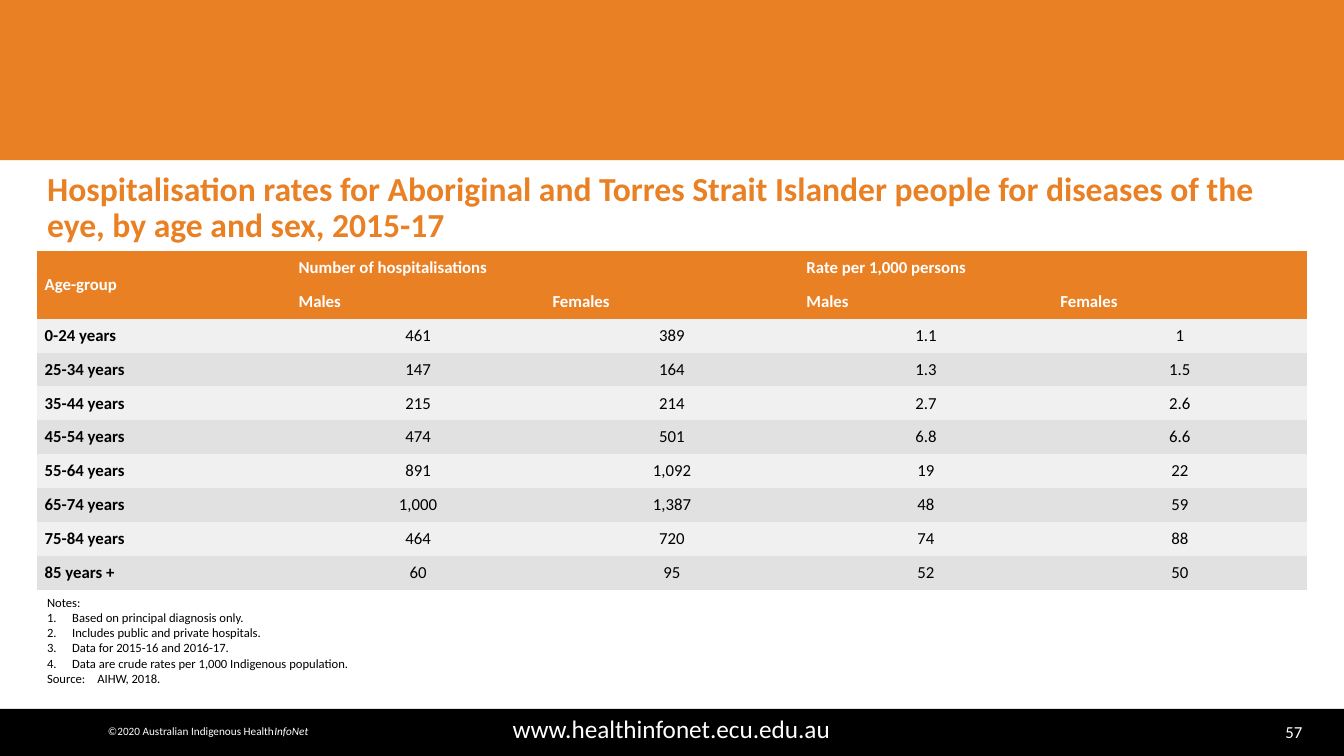
from lxml.etree import SubElement
from pptx import Presentation
from pptx.dml.color import RGBColor
from pptx.enum.shapes import MSO_SHAPE
from pptx.enum.text import MSO_ANCHOR as ANCHOR, PP_ALIGN as ALIGN
from pptx.oxml.ns import qn
from pptx.util import Pt

ORANGE = RGBColor(0xEA, 0x80, 0x24)
BLACK = RGBColor(0, 0, 0)
WHITE = RGBColor(0xFF, 0xFF, 0xFF)
LIGHT_GREY = RGBColor(0xF0, 0xF0, 0xF0)
MID_GREY = RGBColor(0xE1, 0xE1, 0xE1)
NO_STYLE = "{2D5ABB26-0587-4C30-8999-92F81FD0307C}"


def write(paragraph, text, size=12, color=WHITE, bold=False, italic=False, align=ALIGN.LEFT):
    paragraph.alignment = align
    run = paragraph.add_run()
    run.text = text
    run.font.name = "Calibri"
    run.font.size = Pt(size)
    run.font.color.rgb = color
    run.font.bold = bold
    run.font.italic = italic


def add_box(left, top, width, height, anchor=ANCHOR.TOP, wrap=True):
    frame = slide.shapes.add_textbox(Pt(left), Pt(top), Pt(width), Pt(height)).text_frame
    frame.word_wrap = wrap
    frame.vertical_anchor = anchor
    return frame


presentation = Presentation()
presentation.slide_width = Pt(960)
presentation.slide_height = Pt(540)
slide = presentation.slides.add_slide(presentation.slide_layouts[5])

for left, top, width, height, color in [
    (-2, 0, 962, 114.5, ORANGE),
    (0, 506.3, 960, 33.7, BLACK),
]:
    band = slide.shapes.add_shape(MSO_SHAPE.RECTANGLE, Pt(left), Pt(top), Pt(width), Pt(height))
    band.shadow.inherit = False
    band.fill.solid()
    band.fill.fore_color.rgb = color
    band.line.fill.background()

page_number = add_box(860.4, 512, 77, 21.6, ANCHOR.MIDDLE)
write(page_number.paragraphs[0], "57", align=ALIGN.RIGHT)
website = add_box(44.6, 506.2, 870, 28)
write(website.paragraphs[0], "www.healthinfonet.ecu.edu.au", size=18, align=ALIGN.CENTER)
copyright_line = add_box(66.2, 514, 165, 17.3, wrap=False).paragraphs[0]
write(copyright_line, "©2020 Australian Indigenous Health", size=8, align=ALIGN.CENTER)
write(copyright_line, "InfoNet", size=8, italic=True, align=ALIGN.CENTER)

title = slide.shapes.title
title.left, title.top, title.width, title.height = Pt(26.5), Pt(118.8), Pt(907), Pt(60.5)
title.text_frame.word_wrap = True
title.text_frame.vertical_anchor = ANCHOR.MIDDLE
heading = title.text_frame.paragraphs[0]
heading.line_spacing = 0.9
write(
    heading,
    "Hospitalisation rates for Aboriginal and Torres Strait Islander people "
    "for diseases of the eye, by age and sex, 2015-17",
    size=24, color=ORANGE, bold=True,
)

rows = [
    ("Age-group", "Number of hospitalisations", "", "Rate per 1,000 persons", ""),
    ("", "Males", "Females", "Males", "Females"),
    ("0-24 years", "461", "389", "1.1", "1"),
    ("25-34 years", "147", "164", "1.3", "1.5"),
    ("35-44 years", "215", "214", "2.7", "2.6"),
    ("45-54 years", "474", "501", "6.8", "6.6"),
    ("55-64 years", "891", "1,092", "19", "22"),
    ("65-74 years", "1,000", "1,387", "48", "59"),
    ("75-84 years", "464", "720", "74", "88"),
    ("85 years +", "60", "95", "52", "50"),
]
table_shape = slide.shapes.add_table(len(rows), 5, Pt(26.5), Pt(179.3), Pt(907), Pt(242))
table_shape.element.find(".//" + qn("a:tableStyleId")).text = NO_STYLE
table = table_shape.table
for row_index, row in enumerate(rows):
    table.rows[row_index].height = Pt(24.2)
    is_header = row_index < 2
    for column_index, text in enumerate(row):
        is_label = column_index == 0
        cell = table.cell(row_index, column_index)
        cell.fill.solid()
        cell.fill.fore_color.rgb = ORANGE if is_header else (LIGHT_GREY, MID_GREY)[row_index % 2]
        cell.vertical_anchor = ANCHOR.MIDDLE
        cell.margin_left = cell.margin_right = Pt(5.4)
        cell.margin_top = cell.margin_bottom = Pt(0)
        if text:
            paragraph = cell.text_frame.paragraphs[0]
            paragraph.space_after = Pt(5)
            align = ALIGN.LEFT if is_header else ALIGN.JUSTIFY if is_label else ALIGN.CENTER
            write(paragraph, text, color=WHITE if is_header else BLACK,
                  bold=is_header or is_label, align=align)
table.cell(0, 0).merge(table.cell(1, 0))
table.cell(0, 1).merge(table.cell(0, 2))
table.cell(0, 3).merge(table.cell(0, 4))

notes = [
    ("Notes:", False),
    ("Based on principal diagnosis only.", True),
    ("Includes public and private hospitals.", True),
    ("Data for 2015-16 and 2016-17.", True),
    ("Data are crude rates per 1,000 Indigenous population.", True),
    ("Source:\tAIHW, 2018.", False),
]
notes_frame = add_box(26.5, 421.3, 907, 74)
for index, (text, numbered) in enumerate(notes):
    paragraph = notes_frame.add_paragraph() if index else notes_frame.paragraphs[0]
    properties = paragraph._p.get_or_add_pPr()
    if numbered:
        properties.set("marL", str(Pt(18)))
        properties.set("indent", str(Pt(-18)))
        SubElement(properties, qn("a:buFont"), typeface="+mj-lt")
        SubElement(properties, qn("a:buAutoNum"), type="arabicPeriod")
    tab_list = SubElement(properties, qn("a:tabLst"))
    for position in (36, 46.8):
        SubElement(tab_list, qn("a:tab"), pos=str(Pt(position)), algn="l")
    write(paragraph, text, size=9, color=BLACK)

presentation.save("out.pptx")
